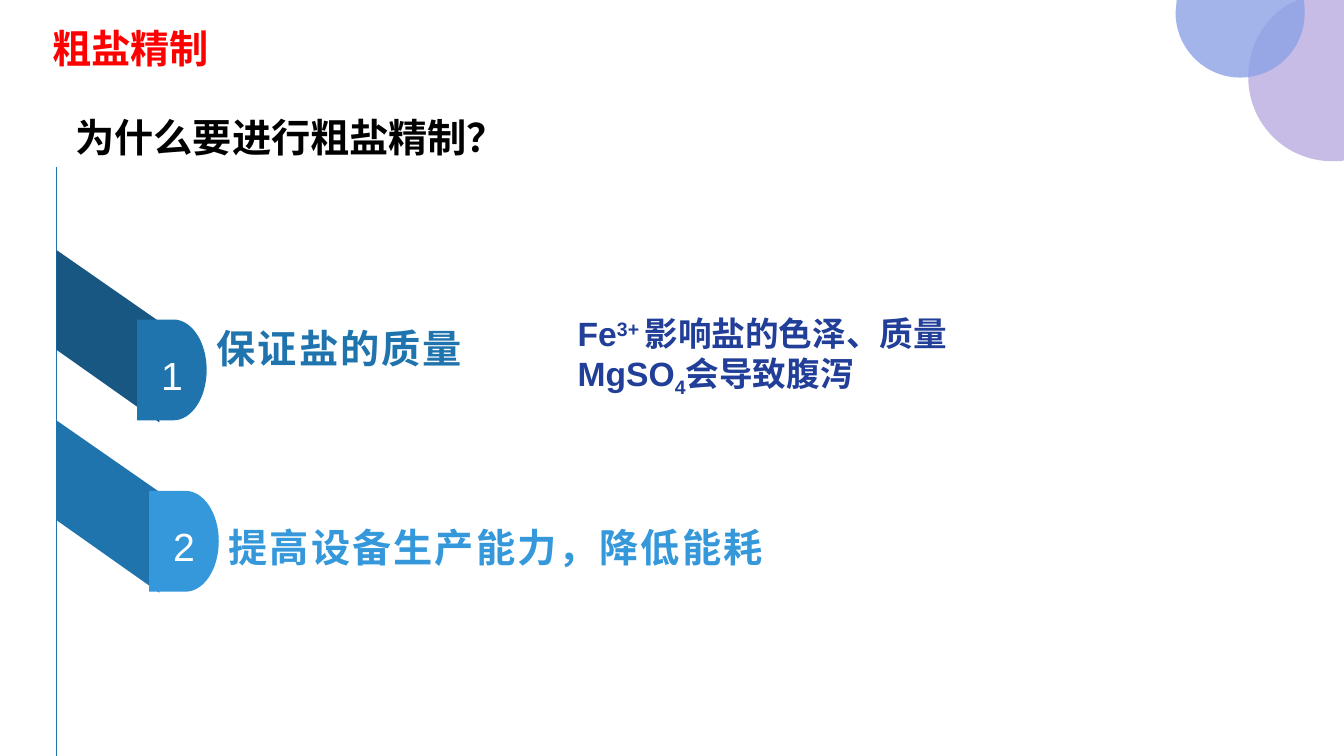
import pptx
import pptx.util
import pptx.dml.color
import pptx.enum.shapes
import pptx.enum.text
import pptx.oxml.ns
import lxml.etree

PX = 9144  # EMU per px, 100 px to the inch
WIDTH, HEIGHT = 1333, 750

RED = pptx.dml.color.RGBColor(0xFF, 0x00, 0x00)
BLACK = pptx.dml.color.RGBColor(0x00, 0x00, 0x00)
WHITE = pptx.dml.color.RGBColor(0xFF, 0xFF, 0xFF)
NAVY = pptx.dml.color.RGBColor(0x21, 0x3E, 0x98)
DARK_BLUE = pptx.dml.color.RGBColor(0x17, 0x57, 0x82)
BLUE = pptx.dml.color.RGBColor(0x1F, 0x74, 0xAD)
LIGHT_BLUE = pptx.dml.color.RGBColor(0x34, 0x98, 0xDB)
LILAC = pptx.dml.color.RGBColor(0xA5, 0x95, 0xD7)
PERIWINKLE = pptx.dml.color.RGBColor(0x8C, 0xA2, 0xE6)

ANCHOR = pptx.enum.text.MSO_ANCHOR
ALIGN = pptx.enum.text.PP_ALIGN
qn = pptx.oxml.ns.qn

deck = pptx.Presentation()
deck.slide_width, deck.slide_height = WIDTH * PX, HEIGHT * PX
page = deck.slides.add_slide(deck.slide_layouts[1])
shapes = page.shapes


def outline(color, start, *segments):
    """Draw a filled outline; a segment of one point is a line, of three a curve."""
    builder = shapes.build_freeform(*start, scale=PX)
    builder.add_line_segments([point for segment in segments for point in segment])
    shape = builder.convert_to_shape()
    steps = iter(shape._element.findall(".//" + qn("a:lnTo")))
    for segment in segments:
        parts = [next(steps) for point in segment]
        if len(parts) == 3:
            curve = lxml.etree.Element(qn("a:cubicBezTo"))
            parts[0].addprevious(curve)
            for part in parts:
                curve.append(part[0])
                part.getparent().remove(part)
    shape.shadow.inherit = False
    shape.line.fill.background()
    shape.fill.solid()
    shape.fill.fore_color.rgb = color
    return shape


def write(box, place, lines, color, size=28, bold=True, spacing=0,
          anchor=ANCHOR.TOP, align=ALIGN.LEFT, line_spacing=1.0):
    """Place a box and fill it; each line is a list of (text, baseline)."""
    for name, value in zip(("left", "top", "width", "height"), place):
        setattr(box, name, value * PX)
    frame = box.text_frame
    frame_format = {"word_wrap": True, "vertical_anchor": anchor,
                    "auto_size": pptx.enum.text.MSO_AUTO_SIZE.NONE}
    for name, value in frame_format.items():
        setattr(frame, name, value)
    para_format = {"alignment": align, "line_spacing": line_spacing,
                   "space_before": pptx.util.Pt(0)}
    font_format = {"name": "Arial", "size": pptx.util.Pt(size), "bold": bold}
    for index, line in enumerate(lines):
        para = frame.add_paragraph() if index else frame.paragraphs[0]
        for name, value in para_format.items():
            setattr(para, name, value)
        for text, baseline in line:
            span = para.add_run()
            span.text = text
            for name, value in font_format.items():
                setattr(span.font, name, value)
            span.font.color.rgb = color
            properties = span._r.get_or_add_rPr()
            if spacing:
                properties.set("spc", str(spacing))
            if baseline:
                properties.set("baseline", str(baseline))


# Corner circles, cut off at the slide edges
large_circle = outline(
    LILAC, (1287, 0), [(WIDTH, 0)], [(WIDTH, 159)], [(1330, 160)],
    [(1328, 160), (1325, 160), (1322, 160)],
    [(1275, 160), (1238, 123), (1238, 76)],
    [(1238, 47), (1252, 22), (1275, 6)])
small_circle = outline(
    PERIWINKLE, (1167, 0), [(1293, 0)],
    [(1294, 4), (1294, 8), (1294, 13)],
    [(1294, 48), (1266, 77), (1230, 77)],
    [(1195, 77), (1166, 48), (1166, 13)],
    [(1166, 8), (1167, 4), (1167, 0)])
for circle, opacity in ((large_circle, 63), (small_circle, 80)):
    tint = circle._element.spPr.find(".//" + qn("a:srgbClr"))
    lxml.etree.SubElement(tint, qn("a:alpha")).set("val", str(opacity * 1000))

# Title and question
write(shapes.title, (42, 19, 400, 57), [[("粗盐精制", 0)]], RED)
question = shapes.add_textbox(0, 0, 0, 0)
write(question, (65, 108, 1126, 57), [[("为什么要进行粗盐精制？", 0)]], BLACK)

# Vertical rail
rail = shapes.add_connector(pptx.enum.shapes.MSO_CONNECTOR.STRAIGHT,
                            56 * PX, 166 * PX, 56 * PX, HEIGHT * PX)
rail.line.color.rgb = BLUE
rail.line.width = pptx.util.Pt(0.5)
lxml.etree.SubElement(rail._element.spPr, qn("a:effectLst"))

# Reasons: slanted ribbon, numbered tab and heading
reasons = (
    ("1", "保证盐的质量", 248, 136, 317, 285, DARK_BLUE, BLUE),
    ("2", "提高设备生产能力，降低能耗", 417, 148, 487, 483, BLUE, LIGHT_BLUE),
)
for number, heading, ribbon_top, left, top, heading_top, shade, color in reasons:
    outline(shade, (56, ribbon_top), [(158, ribbon_top + 71)],
            [(158, ribbon_top + 171)], [(56, ribbon_top + 99)])

    right, middle, bottom = left + 69, top + 50, top + 100
    tab = outline(color, (left, top), [(left + 36, top)],
                  [(left + 54, top), (right, top + 22), (right, middle)],
                  [(right, top + 78), (left + 54, bottom), (left + 36, bottom)],
                  [(left, bottom)])
    write(tab, (left, top, 69, 100), [[(number, 0)]], WHITE, bold=False,
          spacing=300, anchor=ANCHOR.MIDDLE, align=ALIGN.CENTER, line_spacing=1.2)

    label = shapes.add_textbox(0, 0, 0, 0)
    write(label, (right, heading_top, 923, 110), [[(heading, 0)]], color,
          spacing=150, anchor=ANCHOR.MIDDLE, line_spacing=1.2)

# Impurity effects, without bullets
effects = page.placeholders[1]
write(effects, (563, 305, 391, 91),
      [[("Fe", 0), ("3+ ", 30000), ("影响盐的色泽、质量", 0)],
       [("MgSO", 0), ("4", -25000), ("会导致腹泻", 0)]], NAVY, size=24)
for para in effects.text_frame.paragraphs:
    properties = para._p.get_or_add_pPr()
    properties.set("marL", "0")
    properties.set("indent", "0")
    lxml.etree.SubElement(properties, qn("a:buNone"))

deck.save("out.pptx")
